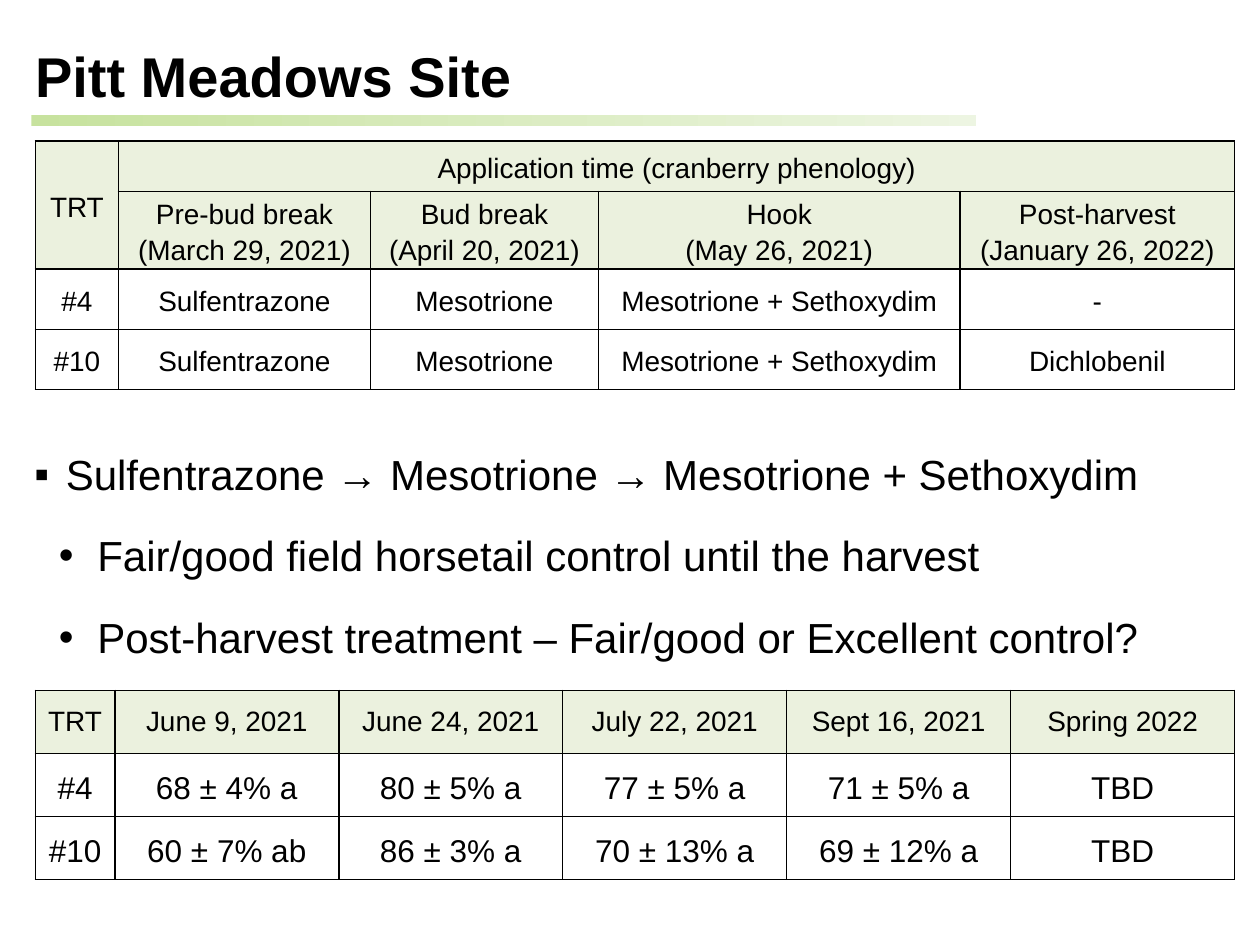
from dataclasses import dataclass

from lxml import etree
from pptx import Presentation
from pptx import util as u
from pptx.dml.color import RGBColor
from pptx.enum import shapes, text
from pptx.oxml import ns

Pt = u.Pt
FONT = "Arial"
BLACK = "000000"
HEADER_FILL = "EBF1DE"
LEFT = 20.2


@dataclass
class Grid:
    top: float
    cols: list[float]
    rows: list[float]
    cells: list[list[str]]
    header_rows: int
    body_size: float
    spacing: float
    inset: float
    anchor: text.MSO_ANCHOR
    merges: tuple = ()


@dataclass
class Bullet:
    mark: str
    margin: float
    hang: float
    words: str


TREATMENTS = Grid(
    top=80.6, cols=[47.5, 144, 130.3, 206.6, 157], rows=[28.8, 44.4, 34.4, 34.4],
    cells=[
        ["TRT", "Application time (cranberry phenology)", "", "", ""],
        ["", "Pre-bud break\n(March 29, 2021)", "Bud break\n(April 20, 2021)",
         "Hook\n(May 26, 2021)", "Post-harvest\n(January 26, 2022)"],
        ["#4", "Sulfentrazone", "Mesotrione", "Mesotrione + Sethoxydim", "-"],
        ["#10", "Sulfentrazone", "Mesotrione", "Mesotrione + Sethoxydim", "Dichlobenil"],
    ],
    header_rows=2, body_size=16, spacing=1.15, inset=4.3, anchor=text.MSO_ANCHOR.MIDDLE,
    merges=(((0, 0), (1, 0)), ((0, 1), (0, 4))),
)
CONTROL = Grid(
    top=394.5, cols=[45.4] + [128] * 5, rows=[36] * 3,
    cells=[
        ["TRT", "June 9, 2021", "June 24, 2021", "July 22, 2021", "Sept 16, 2021", "Spring 2022"],
        ["#4", "68 ± 4% a", "80 ± 5% a", "77 ± 5% a", "71 ± 5% a", "TBD"],
        ["#10", "60 ± 7% ab", "86 ± 3% a", "70 ± 13% a", "69 ± 12% a", "TBD"],
    ],
    header_rows=1, body_size=18, spacing=1.5, inset=5, anchor=text.MSO_ANCHOR.TOP,
)
BULLETS = [
    Bullet("▪", 22.5, 18, "Sulfentrazone → Mesotrione → Mesotrione + Sethoxydim"),
    Bullet("•", 40.5, 22, "Fair/good field horsetail control until the harvest"),
    Bullet("•", 40.5, 22, "Post-harvest treatment – Fair/good or Excellent control?"),
]


def rgb(value: str) -> RGBColor:
    return RGBColor.from_string(value)


def add_run(p, words: str, size: float, bold: bool = False) -> None:
    r = p.add_run()
    r.text = words
    r.font.name, r.font.size, r.font.bold = FONT, Pt(size), bold
    r.font.color.rgb = rgb(BLACK)


def add_text_frame(s, left: float, top: float, width: float, height: float):
    tf = s.shapes.add_textbox(Pt(left), Pt(top), Pt(width), Pt(height)).text_frame
    tf.word_wrap = True
    return tf


def set_borders(cell) -> None:
    """Draw a 1 pt line on all four sides; the lines must precede the fill."""
    props = cell._tc.get_or_add_tcPr()
    for i, side in enumerate(("lnL", "lnR", "lnT", "lnB")):
        line = etree.Element(ns.qn(f"a:{side}"), w=str(Pt(1)))
        fill = etree.SubElement(line, ns.qn("a:solidFill"))
        etree.SubElement(fill, ns.qn("a:srgbClr"), val=BLACK)
        props.insert(i, line)


def fill_cell(cell, words: str, grid: Grid, is_header: bool) -> None:
    if is_header:
        cell.fill.solid()
        cell.fill.fore_color.rgb = rgb(HEADER_FILL)
    else:
        cell.fill.background()
    set_borders(cell)
    cell.margin_left = cell.margin_right = Pt(grid.inset)
    cell.margin_top = cell.margin_bottom = Pt(0)
    cell.vertical_anchor = grid.anchor
    if not words:
        return
    tf = cell.text_frame
    for i, line in enumerate(words.split("\n")):
        p = tf.add_paragraph() if i else tf.paragraphs[0]
        p.alignment = text.PP_ALIGN.CENTER
        p.line_spacing = grid.spacing
        add_run(p, line, 16 if is_header else grid.body_size)


def add_grid(s, grid: Grid) -> None:
    table = s.shapes.add_table(
        len(grid.rows), len(grid.cols), Pt(LEFT), Pt(grid.top),
        Pt(sum(grid.cols)), Pt(sum(grid.rows))).table
    table.first_row = table.horz_banding = False
    for column, width in zip(table.columns, grid.cols):
        column.width = Pt(width)
    for row, height in zip(table.rows, grid.rows):
        row.height = Pt(height)
    for i, row in enumerate(grid.cells):
        for j, words in enumerate(row):
            fill_cell(table.cell(i, j), words, grid, i < grid.header_rows)
    for first, last in grid.merges:
        table.cell(*first).merge(table.cell(*last))


def add_title(s, words: str) -> None:
    tf = add_text_frame(s, 13, 20.2, 673, 46)
    add_run(tf.paragraphs[0], words, 32, bold=True)


def add_title_rule(s) -> None:
    sp = s.shapes.add_shape(shapes.MSO_SHAPE.RECTANGLE, Pt(18), Pt(66), Pt(540), Pt(5.8))
    sp.shadow.inherit = False
    sp.line.fill.background()
    sp.fill.gradient()
    sp.fill.gradient_angle = 0
    for stop, color in zip(sp.fill.gradient_stops, ("C7E29E", "EDF5E2")):
        stop.color.rgb = rgb(color)


def add_bullets(s, bullets: list[Bullet]) -> None:
    tf = add_text_frame(s, 8, 247, 697.7, 136)
    for i, bullet in enumerate(bullets):
        p = tf.add_paragraph() if i else tf.paragraphs[0]
        p.line_spacing = 1.2
        p.space_before = Pt(12)
        props = p._p.get_or_add_pPr()
        props.set("marL", str(Pt(bullet.margin)))
        props.set("indent", str(-Pt(bullet.hang)))
        etree.SubElement(props, ns.qn("a:buFont"), typeface=FONT)
        etree.SubElement(props, ns.qn("a:buChar"), char=bullet.mark)
        add_run(p, bullet.words, 24)


def main() -> None:
    prs = Presentation()
    prs.slide_width, prs.slide_height = Pt(720), Pt(540)
    s = prs.slides.add_slide(prs.slide_layouts[6])
    add_title_rule(s)
    add_title(s, "Pitt Meadows Site")
    add_grid(s, TREATMENTS)
    add_grid(s, CONTROL)
    add_bullets(s, BULLETS)
    prs.save("out.pptx")


if __name__ == "__main__":
    main()
